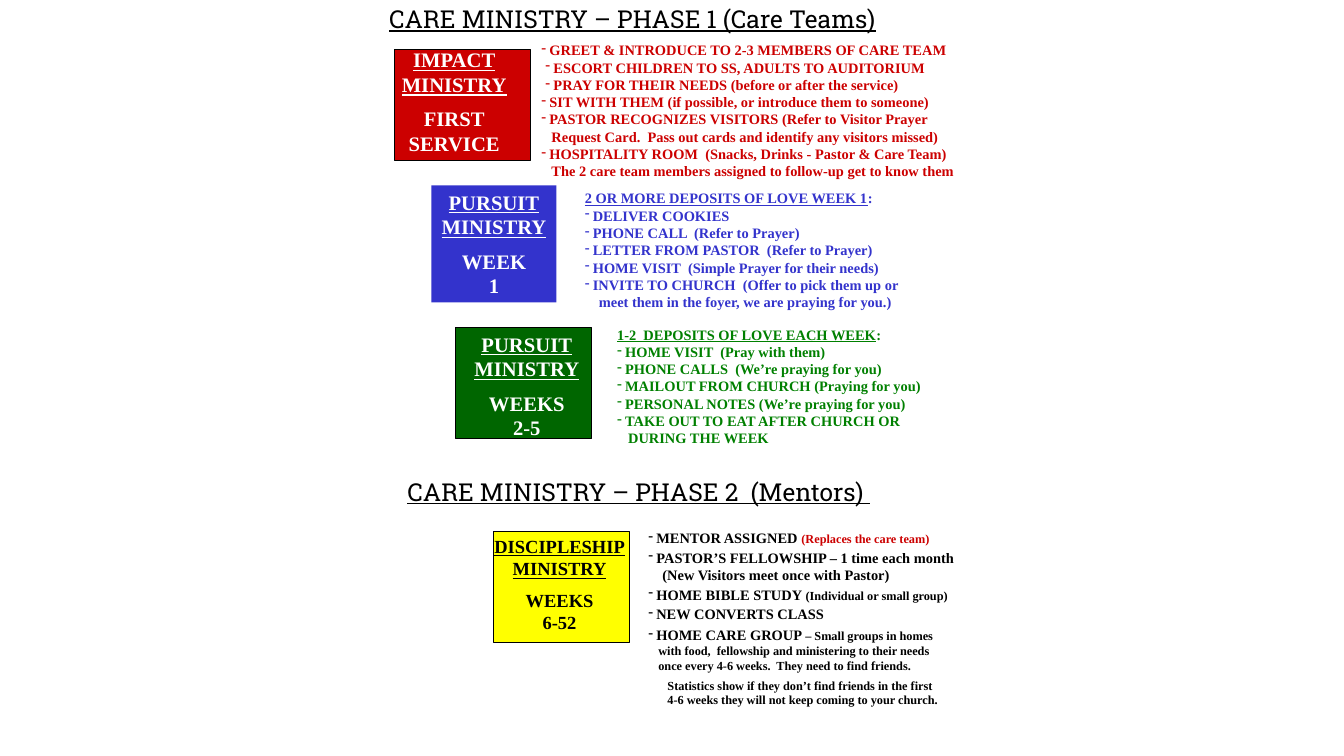
from pptx import Presentation
from pptx.dml.color import RGBColor
from pptx.enum.shapes import MSO_SHAPE
from pptx.enum.text import MSO_ANCHOR, MSO_AUTO_SIZE, PP_ALIGN
from pptx.oxml.ns import qn
from pptx.util import Inches, Pt
from lxml import etree

SERIF, SLAB = "Times New Roman", "Roboto Slab"
BLACK, WHITE, RED, BLUE = "000000", "FFFFFF", "CC0000", "3333CC"
DARK_GREEN, GREEN, YELLOW = "006600", "008000", "FFFF00"
LIST_SIZE, SMALL_SIZE = 10.3, 8.8
HANG = 0.08

# Panels: left, top, width, height, fill
PANELS = [
    (3.91, 0.49, 1.35, 1.1, RED),
    (4.52, 3.25, 1.35, 1.1, DARK_GREEN),
    (4.89, 5.27, 1.35, 1.1, YELLOW),
]

# Labels: box, underlined name, period, size, colour, own fill
LABELS = [
    ((3.91, 0.43, 1.19, 1.16), ["IMPACT", "MINISTRY"], ["FIRST", "SERVICE"], 14.7, WHITE, None),
    ((4.28, 1.84, 1.24, 1.16), ["PURSUIT", "MINISTRY"], ["WEEK", "1"], 14.7, WHITE, BLUE),
    ((4.63, 3.25, 1.19, 1.16), ["PURSUIT", "MINISTRY"], ["WEEKS", "2-5"], 14.7, WHITE, None),
    ((4.82, 5.27, 1.46, 1.06), ["DISCIPLESHIP", "MINISTRY"], ["WEEKS", "6-52"], 13.2, BLACK, None),
]

TITLES = [
    ((3.79, 0, 5.86, 0.37), "CARE MINISTRY – PHASE 1 (Care Teams)"),
    ((3.97, 4.69, 5.5, 0.52), "CARE MINISTRY – PHASE 2  (Mentors) "),
]

UNDERLINED = {"underline": True}
SMALL = {"size": SMALL_SIZE}
SMALL_RED = {"size": SMALL_SIZE, "color": RED}


def bullet(*runs, gap=0, left=0):
    return {"runs": runs, "gap": gap, "left": left + HANG, "bullet": True}


def plain(*runs, gap=0, left=0):
    return {"runs": runs, "gap": gap, "left": left}


# Lists: box, colour, wraps, lines
LISTS = [
    ((5.26, 0.37, 4.34, 1.46), RED, False, [
        bullet("GREET & INTRODUCE TO 2-3 MEMBERS OF CARE TEAM", left=0.04),
        bullet("ESCORT CHILDREN TO SS, ADULTS TO AUDITORIUM", left=0.08),
        bullet("PRAY FOR THEIR NEEDS (before or after the service)", left=0.08),
        bullet("SIT WITH THEM (if possible, or introduce them to someone)", left=0.04),
        bullet("PASTOR RECOGNIZES VISITORS (Refer to Visitor Prayer", left=0.04),
        plain("Request Card.  Pass out cards and identify any visitors missed)", left=0.14),
        bullet("HOSPITALITY ROOM  (Snacks, Drinks - Pastor & Care Team)", left=0.04),
        plain("The 2 care team members assigned to follow-up get to know them", left=0.14),
    ]),
    ((5.73, 1.84, 3.3, 1.29), BLUE, False, [
        plain(("2 OR MORE DEPOSITS OF LOVE WEEK 1", UNDERLINED), ":"),
        bullet("DELIVER COOKIES"),
        bullet("PHONE CALL  (Refer to Prayer)"),
        bullet("LETTER FROM PASTOR  (Refer to Prayer)"),
        bullet("HOME VISIT  (Simple Prayer for their needs)"),
        bullet("INVITE TO CHURCH  (Offer to pick them up or"),
        plain("meet them in the foyer, we are praying for you.)", left=0.14),
    ]),
    ((6.05, 3.19, 3.19, 1.29), GREEN, False, [
        plain(("1-2  DEPOSITS OF LOVE EACH WEEK", UNDERLINED), ":"),
        bullet("HOME VISIT  (Pray with them)"),
        bullet("PHONE CALLS  (We’re praying for you)"),
        bullet("MAILOUT FROM CHURCH (Praying for you)"),
        bullet("PERSONAL NOTES (We’re praying for you)"),
        bullet("TAKE OUT TO EAT AFTER CHURCH OR"),
        plain("DURING THE WEEK", left=0.11),
    ]),
    ((6.36, 5.21, 3.25, 2.04), BLACK, True, [
        bullet("MENTOR ASSIGNED ", ("(Replaces the care team)", SMALL_RED)),
        bullet("PASTOR’S FELLOWSHIP – 1 time each month", gap=1.7),
        plain("(New Visitors meet once with Pastor)", left=0.14),
        bullet("HOME BIBLE STUDY ", ("(Individual or small group)", SMALL), gap=1.7),
        bullet("NEW CONVERTS CLASS", gap=1.7),
        bullet("HOME CARE GROUP ", ("– Small groups in homes", SMALL), gap=2.5),
        plain(("with food,  fellowship and ministering to their needs", SMALL), left=0.1),
        plain(("once every 4-6 weeks.  They need to find friends.", SMALL), left=0.1),
        plain(("Statistics show if they don’t find friends in the first", SMALL),
              gap=3.3, left=0.19),
        plain(("4-6 weeks they will not keep coming to your church.", SMALL), left=0.19),
    ]),
]


def rgb(value):
    return RGBColor.from_string(value)


def add_rectangle(slide, box, fill, outline=None):
    shape = slide.shapes.add_shape(MSO_SHAPE.RECTANGLE, *map(Inches, box))
    shape.shadow.inherit = False
    shape.fill.solid()
    shape.fill.fore_color.rgb = rgb(fill)
    if outline:
        shape.line.color.rgb = rgb(outline)
        shape.line.width = Pt(0.75)
    else:
        shape.line.fill.background()
    return shape


def add_text_box(slide, box):
    return slide.shapes.add_textbox(*map(Inches, box))


def add_run(paragraph, text, style):
    run = paragraph.add_run()
    run.text = text
    settings = {
        "name": style["name"],
        "size": Pt(style["size"]),
        "bold": style.get("bold", False),
        "underline": style.get("underline", False),
    }
    for attribute, value in settings.items():
        setattr(run.font, attribute, value)
    run.font.color.rgb = rgb(style["color"])


def indent_paragraph(paragraph, left, has_bullet):
    properties = paragraph._p.get_or_add_pPr()
    properties.set("marL", str(Inches(left)))
    properties.set("indent", str(Inches(-HANG if has_bullet else 0)))
    if has_bullet:
        etree.SubElement(properties, qn("a:buChar")).set("char", "-")


def write_lines(shape, lines, style, align=PP_ALIGN.LEFT, wrap=False):
    """Fill a shape with lines; a run is a string or a (string, style changes) pair."""
    frame = shape.text_frame
    settings = {
        "word_wrap": wrap,
        "auto_size": MSO_AUTO_SIZE.SHAPE_TO_FIT_TEXT,
        "vertical_anchor": MSO_ANCHOR.TOP,
        "margin_left": Inches(0.07),
        "margin_right": Inches(0.07),
        "margin_top": Inches(0.04),
        "margin_bottom": Inches(0.04),
    }
    for attribute, value in settings.items():
        setattr(frame, attribute, value)
    for index, line in enumerate(lines):
        paragraph = frame.add_paragraph() if index else frame.paragraphs[0]
        paragraph.alignment = align
        paragraph.space_before = Pt(line["gap"])
        indent_paragraph(paragraph, line["left"], line.get("bullet", False))
        for run in line["runs"]:
            text, changes = (run, {}) if isinstance(run, str) else run
            add_run(paragraph, text, {**style, **changes})


def add_label(slide, box, name, period, size, color, fill):
    shape = add_rectangle(slide, box, fill) if fill else add_text_box(slide, box)
    lines = [plain((text, UNDERLINED)) for text in name]
    lines += [plain(text, gap=0 if index else 6.8) for index, text in enumerate(period)]
    style = {"name": SERIF, "size": size, "color": color, "bold": True}
    write_lines(shape, lines, style, PP_ALIGN.CENTER, wrap=bool(fill))


def main():
    presentation = Presentation()
    presentation.slide_width = Inches(13.33)
    presentation.slide_height = Inches(7.5)
    slide = presentation.slides.add_slide(presentation.slide_layouts[6])

    for *box, fill in PANELS:
        add_rectangle(slide, box, fill, BLACK)
    for label in LABELS:
        add_label(slide, *label)
    for box, title in TITLES:
        style = {"name": SLAB, "size": 17.6, "color": BLACK, "underline": True}
        write_lines(add_text_box(slide, box), [plain(title)], style)
    for box, color, wrap, lines in LISTS:
        style = {"name": SERIF, "size": LIST_SIZE, "color": color, "bold": True}
        write_lines(add_text_box(slide, box), lines, style, wrap=wrap)

    presentation.save("out.pptx")


if __name__ == "__main__":
    main()
